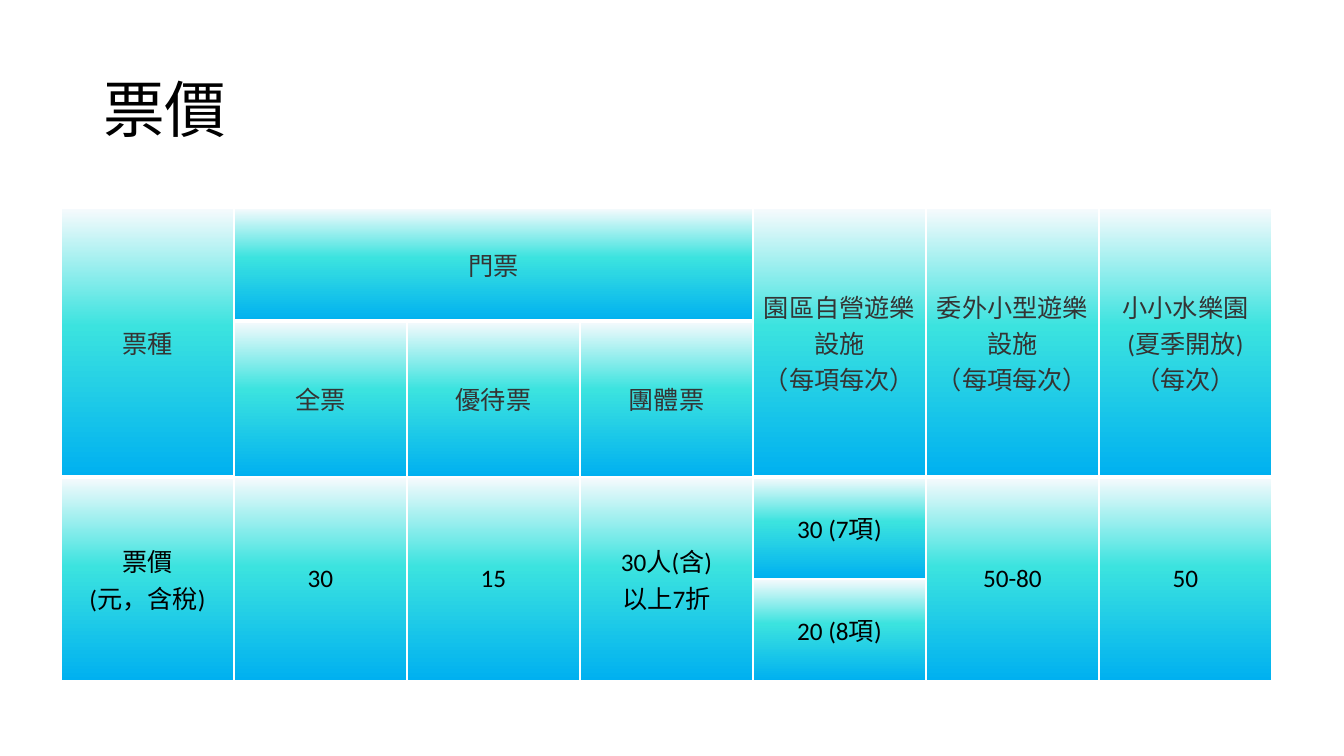
"""Build the ticket price slide: a title above a merged gradient price table."""
from dataclasses import dataclass

from lxml.etree import SubElement
from pptx import Presentation
from pptx.dml.color import RGBColor
from pptx.enum.text import MSO_ANCHOR, MSO_AUTO_SIZE, PP_ALIGN
from pptx.oxml.ns import qn
from pptx.util import Pt

TITLE = "票價"
HEADER_CELLS = [
    (0, 0, 2, 1, "票種"),
    (0, 1, 1, 3, "門票"),
    (0, 4, 2, 1, "園區自營遊樂設施\n（每項每次）"),
    (0, 5, 2, 1, "委外小型遊樂設施\n（每項每次）"),
    (0, 6, 2, 1, "小小水樂園\n(夏季開放)\n（每次）"),
    (1, 1, 1, 1, "全票"),
    (1, 2, 1, 1, "優待票"),
    (1, 3, 1, 1, "團體票"),
]
PRICE_CELLS = [
    (2, 0, 2, 1, "票價\n(元，含稅)"),
    (2, 1, 2, 1, "30"),
    (2, 2, 2, 1, "15"),
    (2, 3, 2, 1, "30人(含)\n以上7折"),
    (2, 4, 1, 1, "30 (7項)"),
    (3, 4, 1, 1, "20 (8項)"),
    (2, 5, 2, 1, "50-80"),
    (2, 6, 2, 1, "50"),
]

SLIDE_SIZE = (1344, 756)
TITLE_BOX = (93, 40, 1159, 146)
TABLE_LEFT, TABLE_TOP = 61, 208
COLUMN_WIDTH, COLUMN_COUNT = 173, 7
ROW_HEIGHTS = (113, 156, 102, 102)
CELL_MARGIN = 3
EMU_PER_PX = 12192000 / 1344


@dataclass(frozen=True)
class Theme:
    """Fonts, sizes and colours of the slide."""
    font: str = "Calibri"
    title_size: int = 44
    cell_size: int = 18
    text: str = "000000"
    header_text: str = "343434"
    border: str = "FFFFFF"
    gradient: tuple = ((0, "F7FAFD"), (44, "3BE3DF"), (100, "00B0F0"))


THEME = Theme()


def px(length):
    """Turn pixels into EMU."""
    return round(length * EMU_PER_PX)


def format_runs(paragraph, size, color):
    """Apply the theme font to every run of a paragraph."""
    for run in paragraph.runs:
        run.font.name = THEME.font
        run.font.size = Pt(size)
        run.font.bold = False
        run.font.color.rgb = RGBColor.from_string(color)


def add_color(parent, color):
    """Append an RGB colour element."""
    SubElement(parent, qn("a:srgbClr"), val=color)


def paint_cell(cell, bottom_width):
    """Give a cell its borders and its vertical gradient."""
    properties = cell._tc.get_or_add_tcPr()
    for side, width in (("L", 1), ("R", 1), ("T", 1), ("B", bottom_width)):
        line = SubElement(properties, qn(f"a:ln{side}"), w=str(Pt(width)))
        add_color(SubElement(line, qn("a:solidFill")), THEME.border)
    gradient = SubElement(properties, qn("a:gradFill"), rotWithShape="1")
    stops = SubElement(gradient, qn("a:gsLst"))
    for percent, color in THEME.gradient:
        add_color(SubElement(stops, qn("a:gs"), pos=str(percent * 1000)), color)
    SubElement(gradient, qn("a:lin"), ang="5400000", scaled="0")


def fill_cell(table, row, column, row_span, column_span, text, color):
    """Merge, paint and write one cell."""
    cell = table.cell(row, column)
    if row_span * column_span > 1:
        cell.merge(table.cell(row + row_span - 1, column + column_span - 1))
    cell.vertical_anchor = MSO_ANCHOR.MIDDLE
    cell.margin_left = cell.margin_right = px(CELL_MARGIN)
    cell.margin_top = cell.margin_bottom = px(CELL_MARGIN)
    paint_cell(cell, 3 if row == 0 else 1)
    paragraph = cell.text_frame.paragraphs[0]
    paragraph.text = text
    paragraph.alignment = PP_ALIGN.CENTER
    format_runs(paragraph, THEME.cell_size, color)


def add_title(slide):
    """Place and format the title placeholder."""
    title = slide.shapes.title
    title.left, title.top, title.width, title.height = map(px, TITLE_BOX)
    frame = title.text_frame
    frame.text = TITLE
    frame.auto_size = MSO_AUTO_SIZE.NONE
    frame.vertical_anchor = MSO_ANCHOR.MIDDLE
    paragraph = frame.paragraphs[0]
    paragraph.alignment = PP_ALIGN.LEFT
    paragraph.line_spacing = 0.9
    format_runs(paragraph, THEME.title_size, THEME.text)


def add_price_table(slide):
    """Add the price table with its header and price rows."""
    table = slide.shapes.add_table(
        len(ROW_HEIGHTS), COLUMN_COUNT, px(TABLE_LEFT), px(TABLE_TOP),
        px(COLUMN_WIDTH * COLUMN_COUNT), px(sum(ROW_HEIGHTS))).table
    table.horz_banding = False
    for column in table.columns:
        column.width = px(COLUMN_WIDTH)
    for row, height in zip(table.rows, ROW_HEIGHTS):
        row.height = px(height)
    for cells, color in ((HEADER_CELLS, THEME.header_text),
                         (PRICE_CELLS, THEME.text)):
        for cell in cells:
            fill_cell(table, *cell, color)


def main():
    """Build and save the presentation."""
    presentation = Presentation()
    presentation.slide_width, presentation.slide_height = map(px, SLIDE_SIZE)
    slide = presentation.slides.add_slide(presentation.slide_layouts[5])
    add_title(slide)
    add_price_table(slide)
    presentation.save("out.pptx")


if __name__ == "__main__":
    main()
